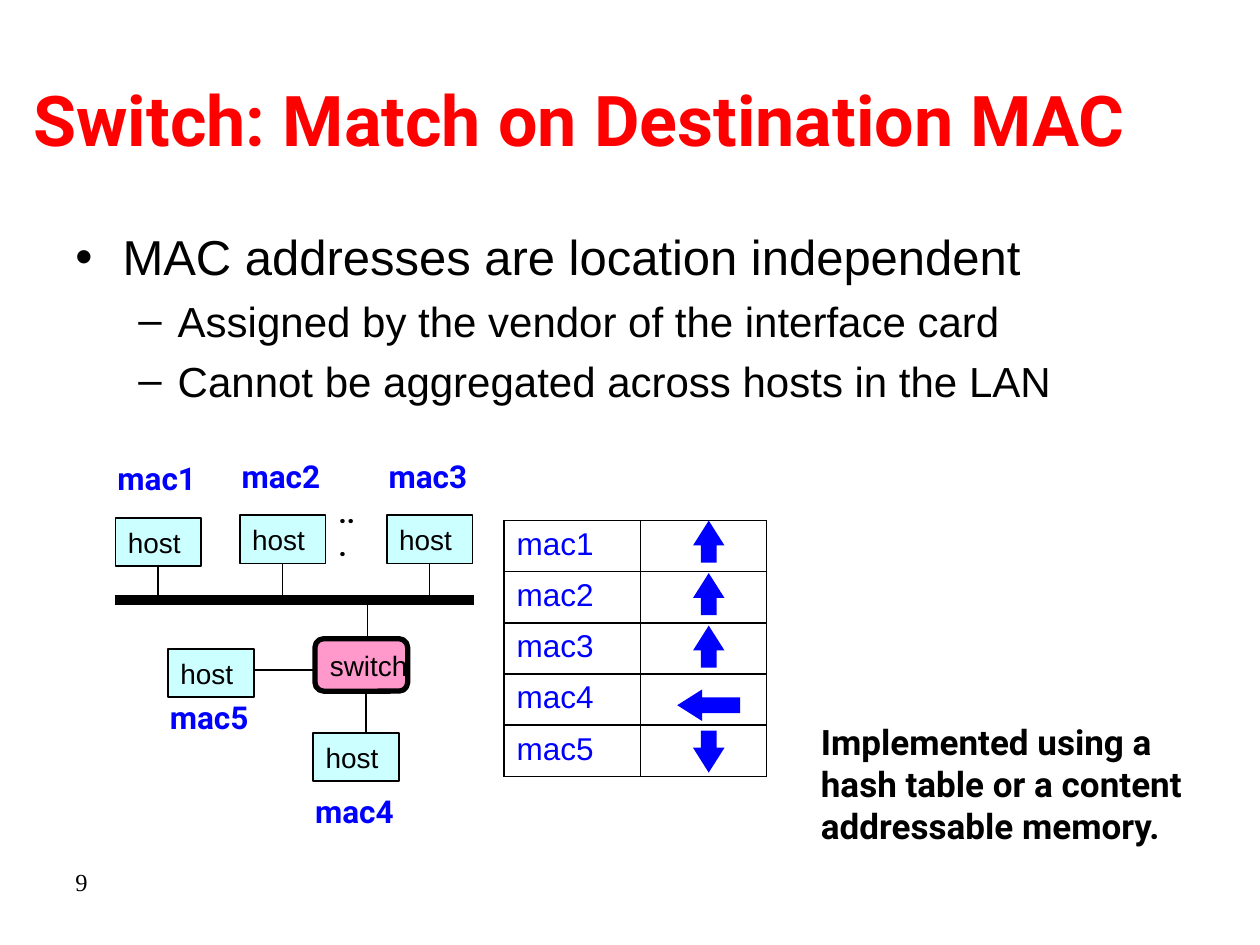
from collections import namedtuple
from dataclasses import dataclass

from lxml.etree import SubElement
from pptx import Presentation
from pptx.dml.color import RGBColor
from pptx.enum.shapes import MSO_CONNECTOR, MSO_SHAPE
from pptx.enum.text import MSO_ANCHOR, MSO_AUTO_SIZE, PP_ALIGN
from pptx.oxml.ns import qn
from pptx.util import Pt

Box = namedtuple("Box", "left top width height")


@dataclass(frozen=True)
class Theme:
    black: RGBColor = RGBColor(0x00, 0x00, 0x00)
    red: RGBColor = RGBColor(0xFF, 0x00, 0x00)
    blue: RGBColor = RGBColor(0x00, 0x00, 0xFF)
    host: RGBColor = RGBColor(0xCC, 0xFF, 0xFF)
    switch: RGBColor = RGBColor(0xFF, 0x99, 0xCC)
    title_size: int = 40
    point_size: int = 28
    subpoint_size: int = 24
    note_size: int = 20
    label_size: int = 18
    node_size: int = 16
    number_size: int = 14


THEME = Theme()


def text_format(name, size, color, bold=False):
    return {"name": name, "size": Pt(size), "bold": bold, "color": color}


TITLE = text_format("Roboto", THEME.title_size, THEME.red, True)
POINT = text_format("Arial", THEME.point_size, THEME.black)
SUBPOINT = text_format("Arial", THEME.subpoint_size, THEME.black)
NOTE = text_format("Roboto", THEME.note_size, THEME.black, True)
LABEL = text_format("Roboto", THEME.label_size, THEME.blue, True)
ENTRY = text_format("Arial", THEME.label_size, THEME.blue)
NODE = text_format("Arial", THEME.node_size, THEME.black)
DOTS = text_format("Roboto", THEME.node_size, THEME.black, True)
NUMBER = text_format("Times New Roman", THEME.number_size, THEME.black)


def in_points(box):
    return [Pt(value) for value in box]


def write(paragraph, text, values):
    paragraph.alignment = PP_ALIGN.LEFT
    run = paragraph.add_run()
    run.text = text
    for key, value in values.items():
        if key == "color":
            run.font.color.rgb = value
        else:
            setattr(run.font, key, value)


def set_frame(frame, wrap=True, anchor=MSO_ANCHOR.TOP):
    settings = {"word_wrap": wrap, "vertical_anchor": anchor,
                "auto_size": MSO_AUTO_SIZE.NONE}
    for key, value in settings.items():
        setattr(frame, key, value)


def add_text(slide, box, text, values, wrap=True, anchor=MSO_ANCHOR.TOP):
    frame = slide.shapes.add_textbox(*in_points(box)).text_frame
    set_frame(frame, wrap, anchor)
    write(frame.paragraphs[0], text, values)


def add_shape(slide, kind, box, fill, line_width=0):
    shape = slide.shapes.add_shape(kind, *in_points(box))
    shape.shadow.inherit = False
    shape.fill.solid()
    shape.fill.fore_color.rgb = fill
    if line_width:
        shape.line.color.rgb = THEME.black
        shape.line.width = Pt(line_width)
    else:
        shape.line.fill.background()
    return shape


def add_node(slide, kind, box, text, fill, line_width):
    shape = add_shape(slide, kind, box, fill, line_width)
    set_frame(shape.text_frame, False, MSO_ANCHOR.MIDDLE)
    write(shape.text_frame.paragraphs[0], text, NODE)
    return shape


def add_line(slide, x1, y1, x2, y2, width=1):
    line = slide.shapes.add_connector(
        MSO_CONNECTOR.STRAIGHT, Pt(x1), Pt(y1), Pt(x2), Pt(y2))
    line.line.color.rgb = THEME.black
    line.line.width = Pt(width)
    SubElement(line._element.spPr, qn("a:effectLst"))
    return line


def place_title(slide, box):
    title = slide.shapes.title
    title.left, title.top, title.width, title.height = in_points(box)
    set_frame(title.text_frame, anchor=MSO_ANCHOR.MIDDLE)
    write(title.text_frame.paragraphs[0], "Switch: Match on Destination MAC", TITLE)


def place_points(slide, box):
    points = [
        (0, "MAC addresses are location independent"),
        (1, "Assigned by the vendor of the interface card"),
        (1, "Cannot be aggregated across hosts in the LAN"),
    ]
    # Text format, bullet, margin, hanging indent and space before, by level
    levels = [(POINT, "•", 27, -27, 6.4), (SUBPOINT, "–", 58.5, -22.5, 5.5)]
    frame = slide.shapes.add_textbox(*in_points(box)).text_frame
    set_frame(frame)
    for index, (level, text) in enumerate(points):
        values, bullet, margin, indent, space = levels[level]
        paragraph = frame.add_paragraph() if index else frame.paragraphs[0]
        paragraph.level = level
        paragraph.space_before = Pt(space)
        write(paragraph, text, values)
        properties = paragraph._p.get_or_add_pPr()
        properties.set("marL", str(Pt(margin)))
        properties.set("indent", str(Pt(indent)))
        SubElement(properties, qn("a:buFont")).set("typeface", "Arial")
        SubElement(properties, qn("a:buChar")).set("char", bullet)


def place_network(slide, box):
    left, top = box.left, box.top
    bus_y = top + 85
    switch = Box(left + 120, top + 107, 53, 30)

    # Bus and the links of the switch
    add_line(slide, left + 6, bus_y, left + 211, bus_y, 6)
    add_line(slide, left + 150, bus_y, left + 150, switch.top)
    switch_bottom = switch.top + switch.height
    add_line(slide, left + 149, switch_bottom, left + 149, top + 161)
    add_line(slide, left + 85, top + 125, switch.left, top + 125)
    add_node(slide, MSO_SHAPE.ROUNDED_RECTANGLE, switch, "switch", THEME.switch, 3)

    # Hosts: name, offset, label offset from the host, whether on the bus
    hosts = [
        ("mac1", 6, 38, -37, True),
        ("mac2", 77, 36.5, -37, True),
        ("mac3", 161, 36.5, -37, True),
        ("mac4", 119, 161, 30, False),
        ("mac5", 36, 113, 24.5, False),
    ]
    for name, x, y, label_offset, on_bus in hosts:
        host = Box(left + x, top + y, 49, 27.5)
        shape = add_node(slide, MSO_SHAPE.RECTANGLE, host, "host", THEME.host, 1)
        if on_bus:
            middle = host.left + host.width / 2
            link = add_line(slide, middle, host.top + host.height, middle, bus_y)
            link.begin_connect(shape, 2)
        label = Box(host.left - 6, host.top + label_offset, 61, 29)
        add_text(slide, label, name, LABEL, wrap=False)
    add_text(slide, Box(left + 126.5, top + 31, 28, 26.5), "...", DOTS,
             anchor=MSO_ANCHOR.MIDDLE)


def add_borders(cell):
    properties = cell._tc.get_or_add_tcPr()
    for index, side in enumerate(("a:lnL", "a:lnR", "a:lnT", "a:lnB")):
        border = properties.makeelement(qn(side), {"w": str(Pt(1))})
        fill = SubElement(border, qn("a:solidFill"))
        SubElement(fill, qn("a:srgbClr")).set("val", str(THEME.black))
        properties.insert(index, border)


def place_match_table(slide, box):
    up = (MSO_SHAPE.UP_ARROW, 18, 24)
    left = (MSO_SHAPE.LEFT_ARROW, 36, 18)
    down = (MSO_SHAPE.DOWN_ARROW, 18, 24)
    # Name, arrow, and middle of the arrow below the top of the table
    entries = [("mac1", up, 12), ("mac2", up, 42), ("mac3", up, 72),
               ("mac4", left, 105.5), ("mac5", down, 132)]
    table = slide.shapes.add_table(len(entries), 2, *in_points(box)).table
    table.first_row = table.horz_banding = False
    for column, width in zip(table.columns, (78, 72)):
        column.width = Pt(width)
    first_height = 28
    other_height = (box.height - first_height) / (len(entries) - 1)
    for index, (name, (kind, width, height), middle) in enumerate(entries):
        row = table.rows[index]
        row.height = Pt(other_height if index else first_height)
        for cell in row.cells:
            cell.fill.background()
            add_borders(cell)
        write(row.cells[0].text_frame.paragraphs[0], name, ENTRY)
        arrow = Box(box.left + 117 - width / 2, box.top + middle - height / 2,
                    width, height)
        shape = add_shape(slide, kind, arrow, THEME.blue)
        shape.adjustments[0], shape.adjustments[1] = 0.5, 0.79


def main():
    presentation = Presentation()
    presentation.slide_width, presentation.slide_height = Pt(720), Pt(540)
    slide = presentation.slides.add_slide(presentation.slide_layouts[5])
    place_title(slide, Box(12, 23, 690, 90))
    place_points(slide, Box(36, 126, 648, 120))
    place_network(slide, Box(60, 258, 217, 220))
    place_match_table(slide, Box(288, 297.5, 150, 145))
    add_text(slide, Box(462, 408, 240, 80),
             "Implemented using a hash table or a content addressable memory.", NOTE)
    add_text(slide, Box(36, 492, 168, 37.5), "9", NUMBER)
    presentation.save("out.pptx")


if __name__ == "__main__":
    main()
